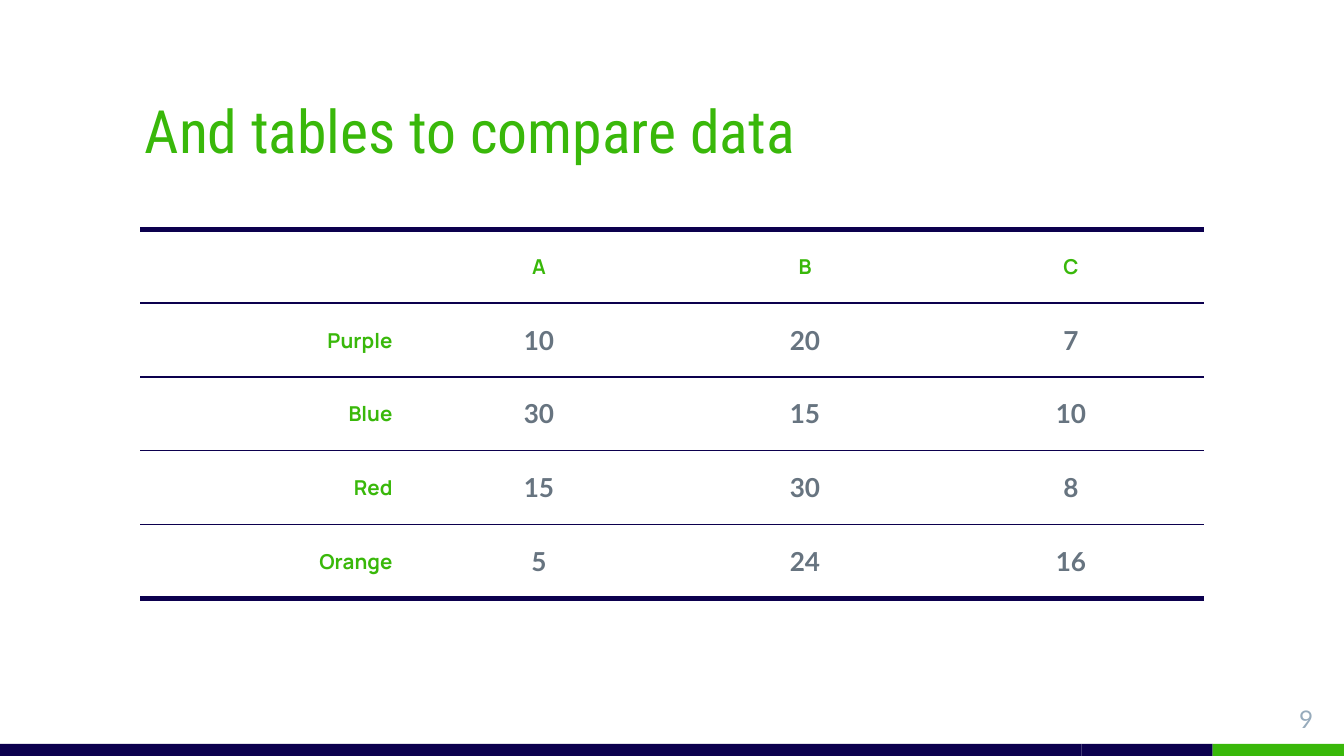
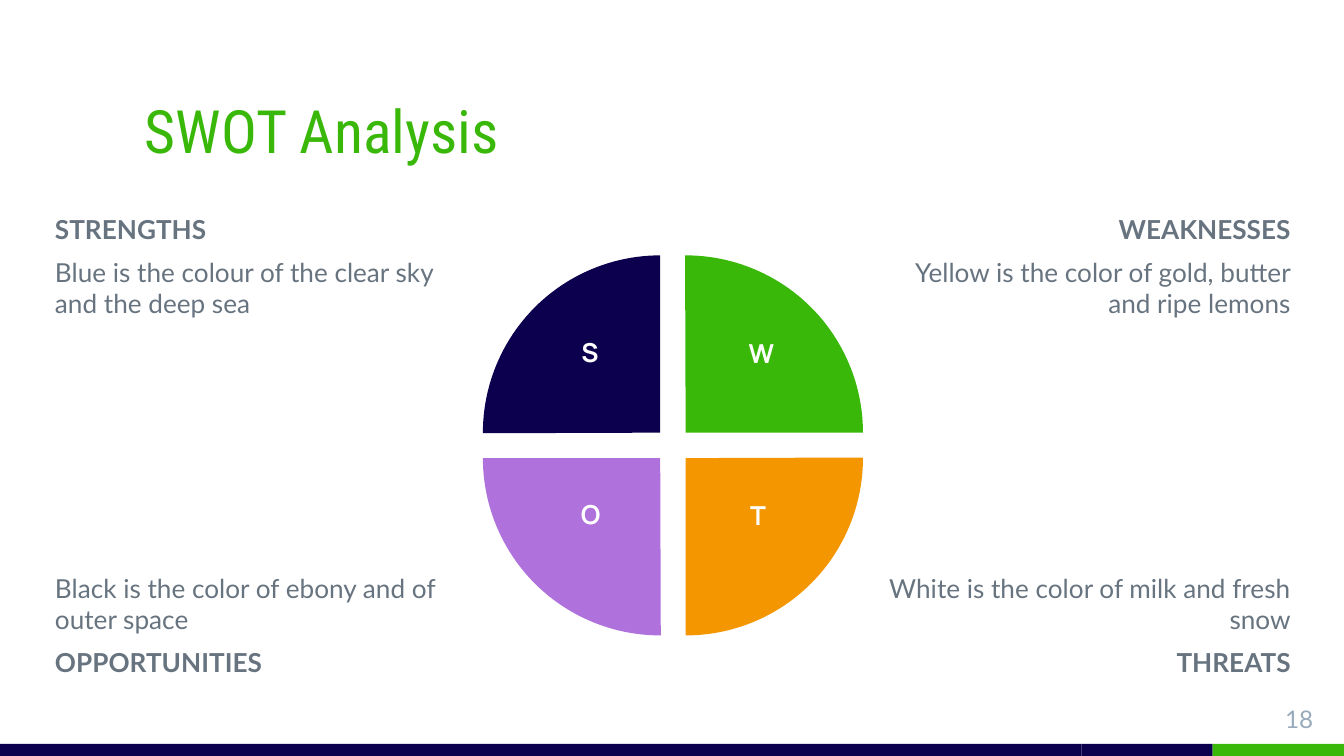
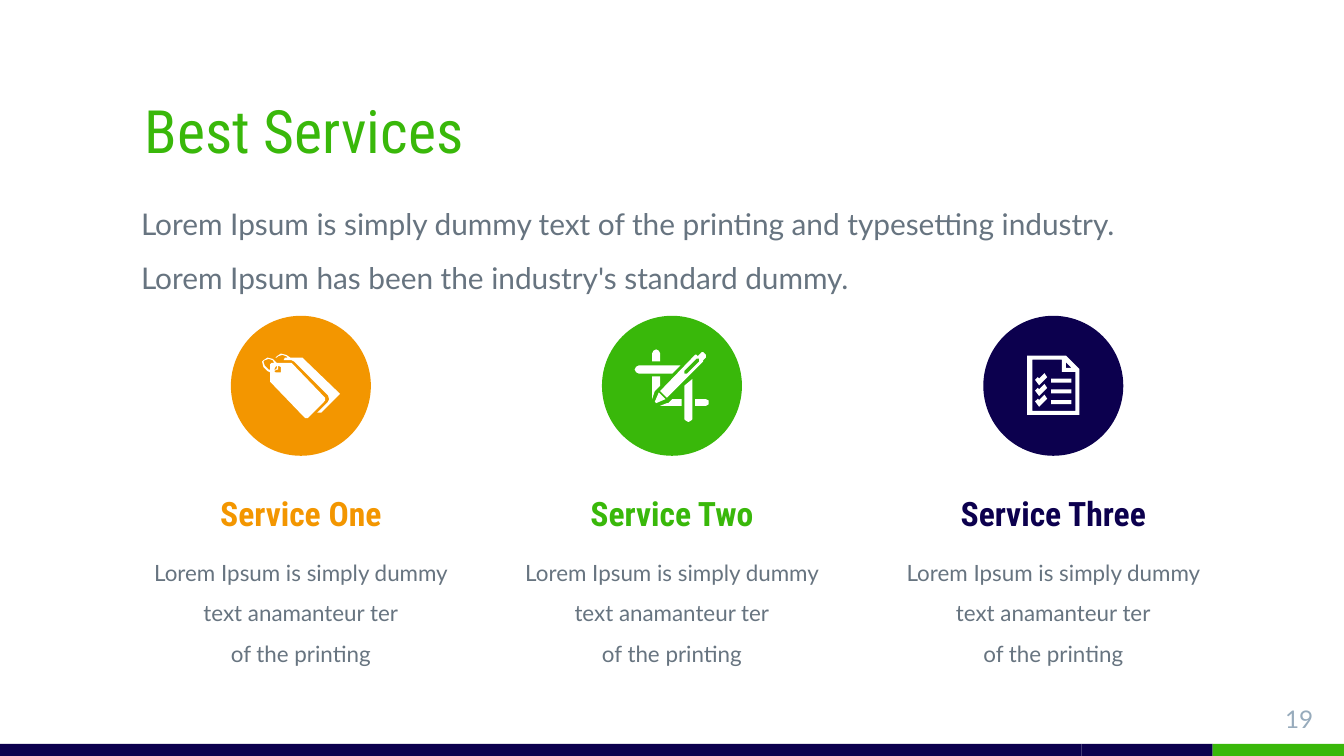
from lxml import etree
from pptx import Presentation
from pptx.dml.color import RGBColor
from pptx.enum.shapes import MSO_SHAPE
from pptx.enum.text import MSO_ANCHOR, MSO_AUTO_SIZE, PP_ALIGN
from pptx.oxml.ns import qn
from pptx.util import Pt

LEFT, CENTER, RIGHT = PP_ALIGN.LEFT, PP_ALIGN.CENTER, PP_ALIGN.RIGHT
TOP, MIDDLE, BOTTOM = MSO_ANCHOR.TOP, MSO_ANCHOR.MIDDLE, MSO_ANCHOR.BOTTOM
RECTANGLE, OVAL, PIE = MSO_SHAPE.RECTANGLE, MSO_SHAPE.OVAL, MSO_SHAPE.PIE
NO_AUTO_SIZE = MSO_AUTO_SIZE.NONE

# Shared look
NAVY, GREEN, ORANGE, PURPLE = "0C004E", "39B80A", "F39600", "AF71DB"
WHITE, GREY, PALE = "FFFFFF", "677480", "97ABBC"
HEADING, BODY, LABEL = "Roboto Condensed", "Lato", "Manrope"
WIDTH, HEIGHT = 720, 405
TITLE_BOX = (70.3, 28.1, 509, 67.7)
NUMBER_BOX = (667.4, 370.1, 43.2, 24.5)
BAND_TOP = 398.6
BANDS = [(70.3, NAVY), (509.1, NAVY), (70.3, NAVY), (70.3, GREEN)]
EVEN_INSETS = (7.2, 7.2, 7.2, 7.2)
BOX_INSETS = (7.2, 3.6, 7.2, 3.6)
TIGHT_INSETS = (5, 2.9, 5, 2.9)

# Icon outlines, in steps of ICON_STEP points from the icon's top left corner
ICON_STEP = 0.72
TAGS = [
    [(47, 33), (22, 7), (11, 7), (8, 4), (4, 3), (1, 5), (0, 6), (1, 10),
     (4, 13), (6, 14), (6, 21), (7, 22), (32, 48), (34, 48), (47, 35)],
    [(7, 7), (6, 8), (6, 12), (5, 12), (2, 9), (1, 6), (2, 5), (5, 4), (8, 5), (9, 7)],
    [(10, 10), (11, 9), (11, 11), (10, 12), (9, 12)],
    [(14, 14), (10, 14), (9, 13), (11, 12), (12, 12), (12, 9), (14, 10)],
    [(57, 31), (44, 44), (41, 44), (49, 36), (50, 34), (49, 31), (24, 6),
     (22, 5), (16, 5), (17, 3), (19, 3), (18, 2), (15, 1), (12, 2), (11, 3),
     (10, 3), (11, 2), (14, 0), (18, 1), (21, 3), (30, 3), (31, 4), (57, 29), (58, 30)],
]
CROP_AND_PEN = [
    [(25, 40), (24, 40), (19, 42), (35, 42), (35, 37), (28, 37)],
    [(53, 37), (45, 37), (45, 42), (53, 42), (55, 41), (55, 38)],
    [(16, 30), (19, 27), (19, 20), (13, 20), (13, 37), (15, 31)],
    [(19, 3), (18, 1), (16, 0), (14, 1), (13, 3), (13, 9), (19, 9)],
    [(37, 52), (38, 53), (40, 54), (42, 53), (43, 52), (43, 22), (37, 27)],
    [(34, 12), (3, 12), (1, 13), (0, 15), (1, 17), (3, 18), (28, 18)],
    [(24, 36), (51, 9), (51, 8), (53, 6), (53, 4), (51, 2), (50, 2), (47, 5),
     (46, 4), (45, 4), (19, 31)],
    [(37, 16), (46, 7), (48, 7), (48, 9), (39, 18), (37, 18)],
    [(18, 32), (15, 39), (16, 40), (23, 37)],
]
CHECKLIST = [
    [(29, 0), (0, 0), (0, 44), (39, 44), (39, 10)],
    [(29, 5), (33, 9), (29, 9)],
    [(36, 41), (4, 41), (4, 3), (26, 3), (26, 12), (36, 12)],
]
for drop in (0, 8, 16):
    CHECKLIST.append([(18, 17 + drop), (33, 17 + drop), (33, 20 + drop), (18, 20 + drop)])
    CHECKLIST.append([(x, y + drop) for x, y in
                      [(9, 17), (8, 16), (6, 18), (9, 22), (15, 16), (13, 13)]])


def color(value):
    return RGBColor.from_string(value)


def points(values):
    return [Pt(value) for value in values]


def style(paragraph, size, name, fill, bold=False, align=LEFT):
    paragraph.alignment = align
    font = paragraph.font
    font.size, font.name, font.bold = Pt(size), name, bold
    font.color.rgb = color(fill)


def set_frame(frame, insets, anchor=TOP):
    frame.word_wrap = True
    frame.auto_size = NO_AUTO_SIZE
    frame.vertical_anchor = anchor
    (frame.margin_left, frame.margin_top,
     frame.margin_right, frame.margin_bottom) = points(insets)


def add_text(slide, box, lines, insets, line_spacing=None, **look):
    frame = slide.shapes.add_textbox(*points(box)).text_frame
    set_frame(frame, insets)
    frame.text = "\n".join(lines)
    for paragraph in frame.paragraphs:
        style(paragraph, **look)
        if line_spacing:
            paragraph.line_spacing = line_spacing


def paint(shape, fill):
    shape.shadow.inherit = False
    shape.fill.solid()
    shape.fill.fore_color.rgb = color(fill)
    shape.line.fill.background()


def add_shape(slide, kind, box, fill):
    shape = slide.shapes.add_shape(kind, *points(box))
    paint(shape, fill)
    return shape


def add_icon(slide, left, top, outlines):
    first, *others = outlines
    builder = slide.shapes.build_freeform(*first[0], scale=Pt(ICON_STEP))
    builder.add_line_segments(first[1:])
    for outline in others:
        builder.move_to(*outline[0])
        builder.add_line_segments(outline[1:])
    paint(builder.convert_to_shape(Pt(left), Pt(top)), WHITE)


def add_bands(slide, layout):
    """Draw the bottom bands and hand them to the layout shared by all slides."""
    left = 0
    for index, (width, fill) in enumerate(BANDS):
        band = add_shape(slide, RECTANGLE, (left, BAND_TOP, width, HEIGHT - BAND_TOP), fill)
        band.element.nvSpPr.cNvPr.set("id", str(20 + index))
        layout.element.cSld.spTree.append(band.element)
        left += width


def add_slide(presentation, layout, title, number):
    slide = presentation.slides.add_slide(layout)
    shape = slide.shapes.title
    shape.left, shape.top, shape.width, shape.height = points(TITLE_BOX)
    set_frame(shape.text_frame, EVEN_INSETS, BOTTOM)
    shape.text_frame.text = title
    style(shape.text_frame.paragraphs[0], 32, HEADING, GREEN)
    add_text(slide, NUMBER_BOX, [number], EVEN_INSETS,
             size=13, name=BODY, fill=PALE, align=RIGHT)
    return slide


def set_border(cell, side, width):
    """Give one side of a cell a navy line; a width of 0 means no line."""
    line = etree.SubElement(cell._tc.get_or_add_tcPr(), qn("a:" + side), w=str(Pt(width)))
    if width:
        fill = etree.SubElement(line, qn("a:solidFill"))
        etree.SubElement(fill, qn("a:srgbClr"), val=NAVY)
    else:
        etree.SubElement(line, qn("a:noFill"))


def add_comparison_table(slide, rows):
    row_count, column_count = len(rows), len(rows[0])
    table = slide.shapes.add_table(
        row_count, column_count, *points((75, 123, 570, 197.5))).table
    table.first_row = table.horz_banding = False
    for row_index, values in enumerate(rows):
        for column_index, value in enumerate(values):
            cell = table.cell(row_index, column_index)
            set_border(cell, "lnL", 0)
            set_border(cell, "lnR", 0)
            set_border(cell, "lnT", 3 if row_index == 0 else 1)
            set_border(cell, "lnB", 3 if row_index == row_count - 1 else 1)
            cell.fill.background()
            cell.vertical_anchor = MIDDLE
            cell.margin_left = cell.margin_right = Pt(7.2)
            cell.margin_top = cell.margin_bottom = Pt(5)
            cell.text = value
            paragraph = cell.text_frame.paragraphs[0]
            if row_index and column_index:
                style(paragraph, 14, BODY, GREY, True, CENTER)
            else:
                style(paragraph, 11, LABEL, GREEN, True, CENTER if column_index else RIGHT)


def add_swot_panel(slide, column, row, heading, text):
    panel = add_shape(slide, RECTANGLE,
                      (22.4 + 345 * column, 107.3 + 138.2 * row, 331.2, 124.6), WHITE)
    frame = panel.text_frame
    insets = (108, 7.2, 7.2, 7.2) if column else (7.2, 7.2, 108, 7.2)
    set_frame(frame, insets, BOTTOM if row else TOP)
    lines = [text, heading] if row else [heading, text]
    frame.text = "\n".join(lines)
    for line, paragraph in zip(lines, frame.paragraphs):
        style(paragraph, 14, BODY, GREY, line == heading, RIGHT if column else LEFT)
    frame.paragraphs[1].space_before = frame.paragraphs[1].space_after = Pt(6)


def add_swot_quarter(slide, column, row, rotation, fill):
    gap, size = 13.6, 190
    quarter = add_shape(slide, PIE,
                        (258.7 + gap * column, 136.8 + gap * row, size, size), fill)
    quarter.adjustments[0], quarter.adjustments[1] = 107.89, 162
    quarter.rotation = rotation


def add_service(slide, center, name, name_width, fill, icon, icon_left, icon_top):
    circle, text_width = 75, 181.4
    add_shape(slide, OVAL, (center - circle / 2, 169.2, circle, circle), fill)
    add_icon(slide, icon_left, icon_top, icon)
    add_text(slide, (center - name_width / 2, 260.6, name_width, 29), [name], BOX_INSETS,
             size=18, name=HEADING, fill=fill, bold=True, align=CENTER)
    add_text(slide, (center - text_width / 2, 289.4, text_width, 70.6),
             ["Lorem Ipsum is simply dummy text anamanteur ter", "of the printing"],
             TIGHT_INSETS, 1.5, size=12, name=BODY, fill=GREY, align=CENTER)


def main():
    presentation = Presentation()
    presentation.slide_width, presentation.slide_height = Pt(WIDTH), Pt(HEIGHT)
    layout = presentation.slide_layouts.get_by_name("Title Only")

    # Table
    slide = add_slide(presentation, layout, "And tables to compare data", "9")
    add_bands(slide, layout)
    add_comparison_table(slide, [
        ["", "A", "B", "C"],
        ["Purple", "10", "20", "7"],
        ["Blue", "30", "15", "10"],
        ["Red", "15", "30", "8"],
        ["Orange", "5", "24", "16"],
    ])

    # SWOT
    slide = add_slide(presentation, layout, "SWOT Analysis", "18")
    for panel in [
        (0, 0, "STRENGTHS", "Blue is the colour of the clear sky and the deep sea"),
        (1, 0, "WEAKNESSES", "Yellow is the color of gold, butter and ripe lemons"),
        (0, 1, "OPPORTUNITIES", "Black is the color of ebony and of outer space"),
        (1, 1, "THREATS", "White is the color of milk and fresh snow"),
    ]:
        add_swot_panel(slide, *panel)
    for quarter in [(0, 0, 0, NAVY), (1, 0, 90, GREEN), (1, 1, 180, ORANGE), (0, 1, 270, PURPLE)]:
        add_swot_quarter(slide, *quarter)
    for letter, box in [
        ("S", (302.4, 176.4, 27.4, 35.3)),
        ("W", (382.3, 177.1, 51.1, 34.6)),
        ("O", (299.5, 263.5, 33.8, 35.3)),
        ("T", (391.7, 264.2, 28.8, 34.6)),
    ]:
        add_text(slide, box, [letter], BOX_INSETS,
                 size=14, name=LABEL, fill=WHITE, bold=True, align=CENTER)

    # Services
    slide = add_slide(presentation, layout, "Best Services", "19")
    add_text(slide, (70.6, 97.9, 532.8, 63.4),
             ["Lorem Ipsum is simply dummy text of the printing and typesetting industry. "
              "Lorem Ipsum has been the industry's standard dummy."],
             TIGHT_INSETS, 1.5, size=16, name=BODY, fill=GREY)
    for service in [
        (161.2, "Service One", 111.6, ORANGE, TAGS, 140.4, 189.4),
        (360, "Service Two", 121.7, GREEN, CROP_AND_PEN, 340, 187.2),
        (564.3, "Service Three", 146.9, NAVY, CHECKLIST, 550.2, 190.6),
    ]:
        add_service(slide, *service)

    presentation.save("out.pptx")


if __name__ == "__main__":
    main()
